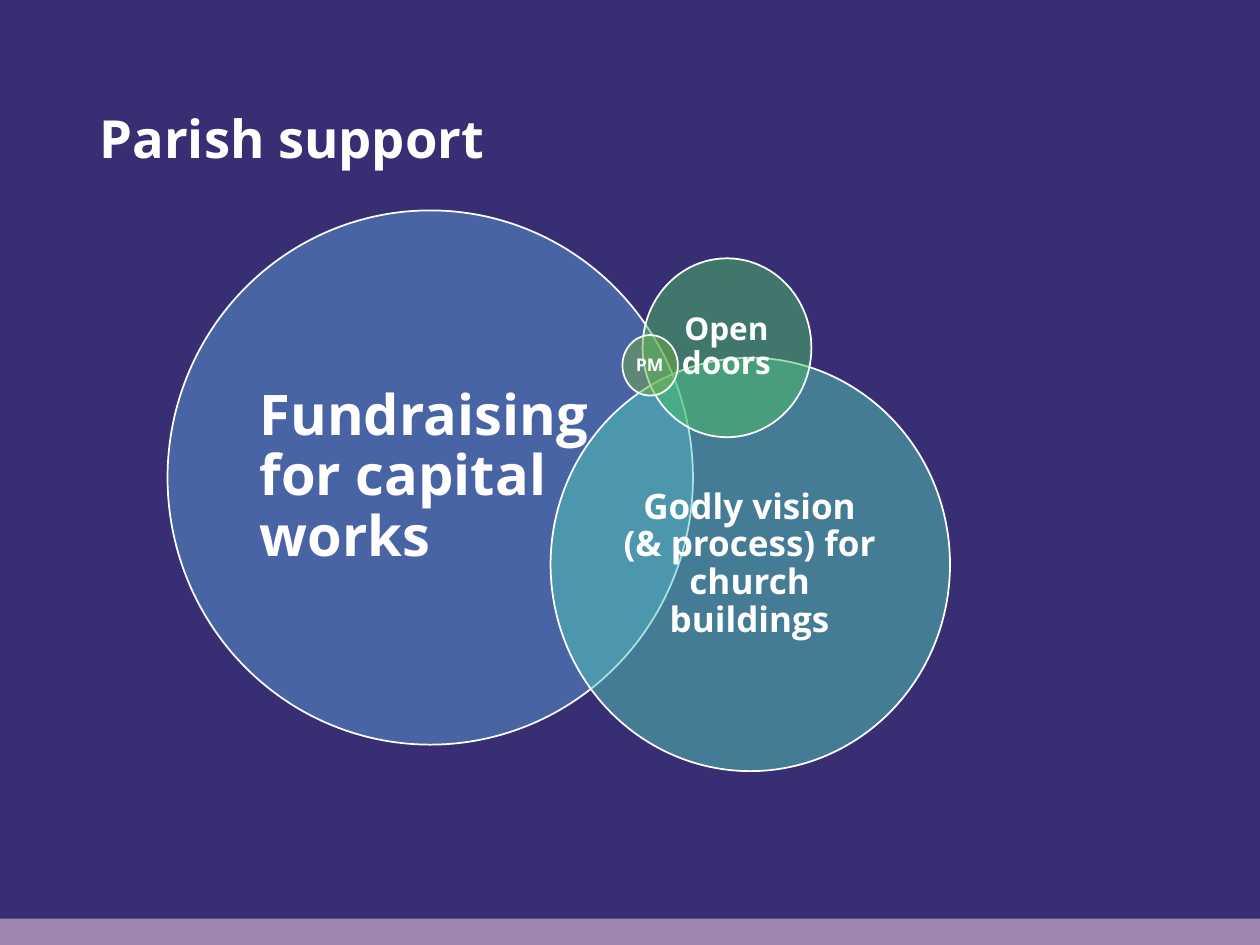
"""Build the Parish support slide with four overlapping circles."""
from lxml import etree
from pptx import Presentation
from pptx.dml.color import RGBColor
from pptx.enum.shapes import MSO_SHAPE
from pptx.enum.text import MSO_ANCHOR, PP_ALIGN
from pptx.oxml.ns import qn
from pptx.util import Inches, Pt

WHITE = RGBColor(0xFF, 0xFF, 0xFF)
PURPLE = RGBColor(0x38, 0x2E, 0x73)
LILAC = RGBColor(0x9F, 0x85, 0xB1)
BLUE = RGBColor(0x5B, 0x9B, 0xD5)
TEAL = RGBColor(0x52, 0xCA, 0xB8)
GREEN = RGBColor(0x49, 0xBF, 0x64)
OLIVE = RGBColor(0x70, 0xAD, 0x47)


def write_text(shape, text, size, align=PP_ALIGN.CENTER, inset=0.1):
    frame = shape.text_frame
    frame.word_wrap = True
    frame.vertical_anchor = MSO_ANCHOR.MIDDLE
    frame.margin_left = frame.margin_right = Inches(inset)
    frame.margin_top = frame.margin_bottom = Inches(inset)
    frame.text = text
    paragraph = frame.paragraphs[0]
    paragraph.alignment = align
    paragraph.line_spacing = 0.9
    for run in paragraph.runs:
        run.font.name = "Open Sans"
        run.font.size = Pt(size)
        run.font.bold = True
        run.font.color.rgb = WHITE


presentation = Presentation()
presentation.slide_width = Inches(10)
presentation.slide_height = Inches(7.5)
slide = presentation.slides.add_slide(presentation.slide_layouts[5])
slide.background.fill.solid()
slide.background.fill.fore_color.rgb = PURPLE

footer_band = slide.shapes.add_shape(
    MSO_SHAPE.RECTANGLE, Inches(0), Inches(7.29), Inches(10), Inches(0.21)
)
footer_band.shadow.inherit = False
footer_band.fill.solid()
footer_band.fill.fore_color.rgb = LILAC
footer_band.line.fill.background()

title = slide.shapes.title
title.left, title.top = Inches(0.69), Inches(0.4)
title.width, title.height = Inches(8.62), Inches(1.45)
write_text(title, "Parish support", size=30, align=PP_ALIGN.LEFT)

circles = [
    ("Fundraising for capital works", BLUE, (1.33, 1.67, 4.17, 4.24),
     (1.93, 2.29, 2.95, 3), 32, PP_ALIGN.LEFT, 0.13),
    ("Godly vision\v(& process) for church buildings", TEAL, (4.37, 2.84, 3.17, 3.28),
     (4.83, 3.32, 2.24, 2.32), 20, PP_ALIGN.CENTER, 0.08),
    ("Open doors", GREEN, (5.1, 2.05, 1.34, 1.42),
     (5.29, 2.25, 0.95, 1.01), 18, PP_ALIGN.CENTER, 0.07),
    ("PM", OLIVE, (4.94, 2.66, 0.44, 0.48),
     (5, 2.73, 0.31, 0.34), 10, PP_ALIGN.CENTER, 0.04),
]
for text, color, circle_box, label_box, size, align, inset in circles:
    circle = slide.shapes.add_shape(MSO_SHAPE.OVAL, *map(Inches, circle_box))
    circle.shadow.inherit = False
    circle.fill.solid()
    circle.fill.fore_color.rgb = color
    fill_color = circle.fill._xPr.find(qn("a:solidFill"))[0]
    etree.SubElement(fill_color, qn("a:alpha"), val="50000")
    circle.line.color.rgb = WHITE
    circle.line.width = Pt(1)

    label = slide.shapes.add_textbox(*map(Inches, label_box))
    write_text(label, text, size=size, align=align, inset=inset)

presentation.save("out.pptx")
